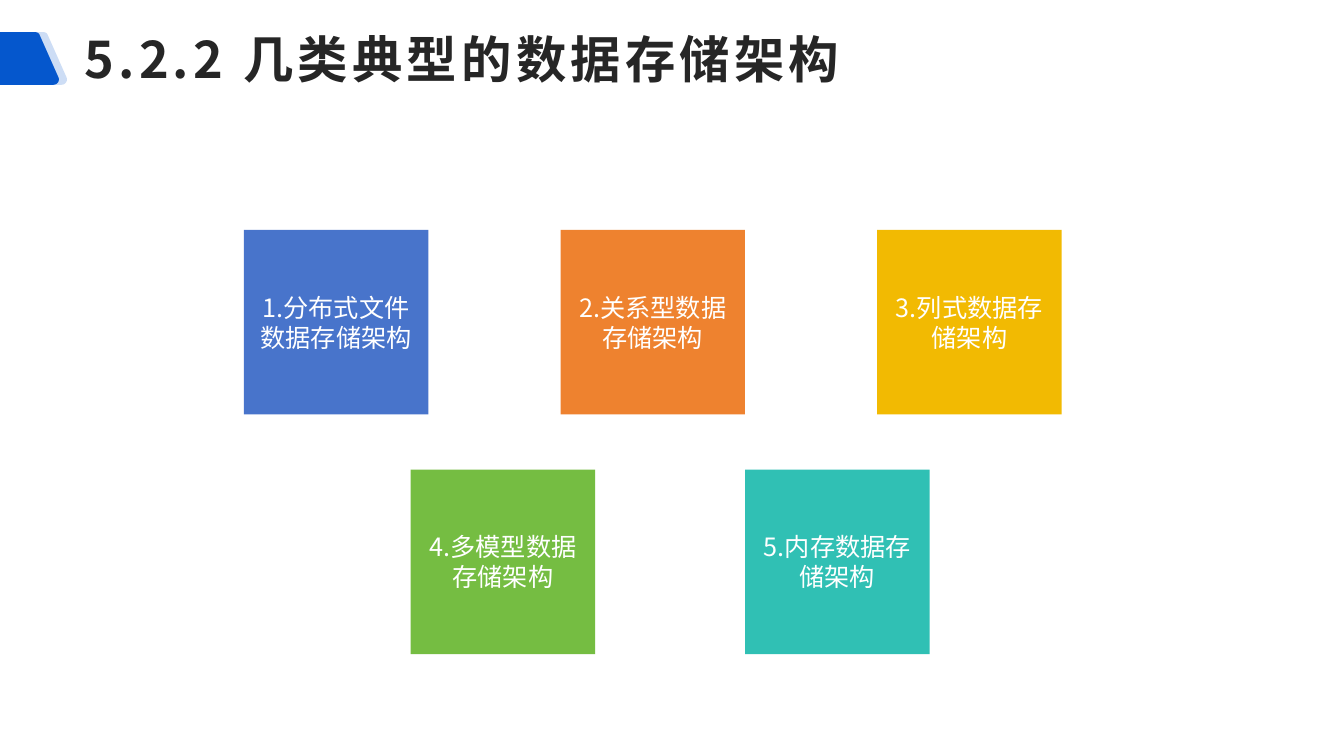
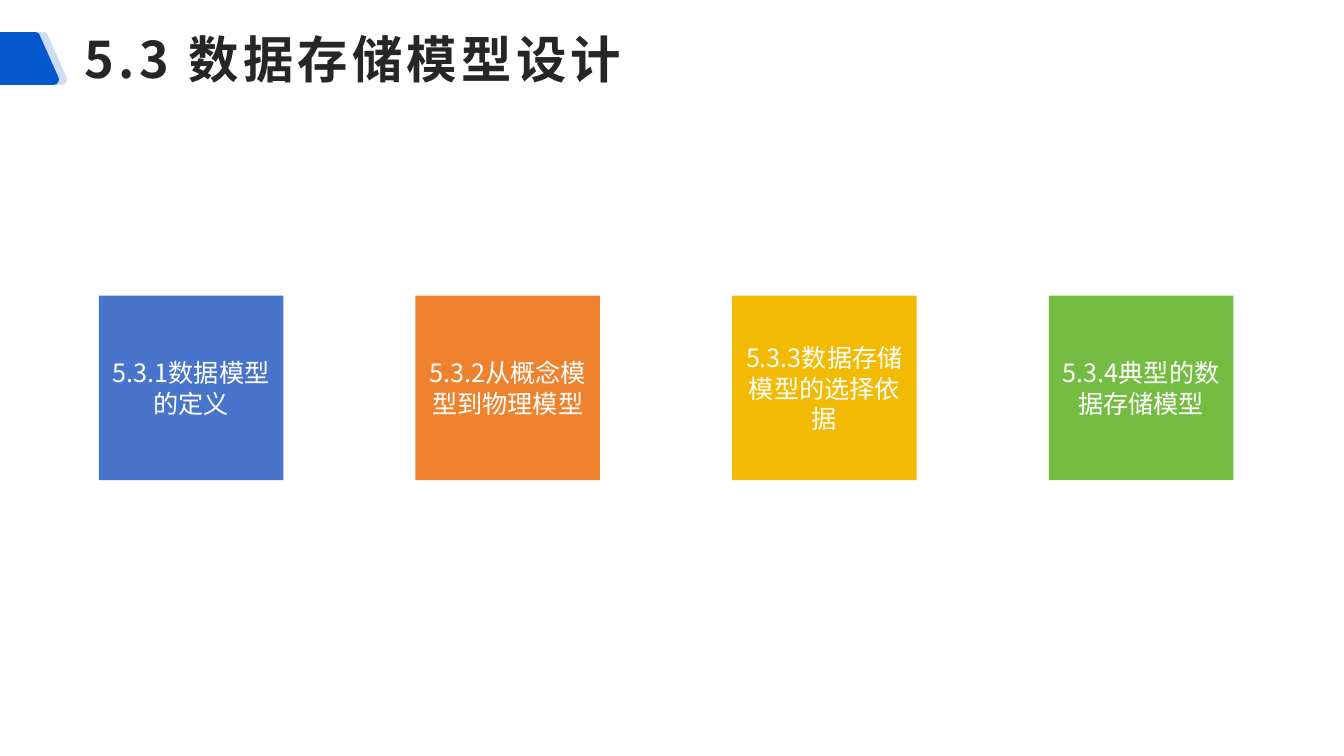
from dataclasses import dataclass

from lxml import etree
from pptx import Presentation
from pptx.dml.color import RGBColor as RGB
from pptx.enum.shapes import MSO_SHAPE as Shape
from pptx.enum.text import MSO_ANCHOR as Anchor, MSO_AUTO_SIZE as AutoSize, PP_ALIGN as Align
from pptx.oxml.ns import qn
from pptx.util import Pt


@dataclass(frozen=True)
class Theme:
    font: str = "Noto Sans CJK SC"
    ink: str = "262626"
    white: str = "FFFFFF"
    badge: str = "0557CD"
    tiles: tuple = ("4874CB", "EE822F", "F2BA02", "75BD42", "30C0B4")
    title_size: int = 36
    title_spacing: int = 3
    tile_size: int = 18


THEME = Theme()
TILE = 131.8
GAP = 94.4


def add_run(p, text, size, color, bold=False, spacing=0):
    r = p.add_run()
    r.text = text
    r.font.size = Pt(size)
    r.font.bold = bold
    r.font.color.rgb = RGB.from_string(color)
    r.font.name = THEME.font
    rpr = r.font._element
    if spacing:
        rpr.set("spc", str(spacing * 100))
    ea = etree.Element(qn("a:ea"), typeface=THEME.font)
    rpr.find(qn("a:latin")).addnext(ea)


def set_fill(sp, color, alpha=100):
    sp.fill.solid()
    sp.fill.fore_color.rgb = RGB.from_string(color)
    sp.line.fill.background()
    sp.shadow.inherit = False
    if alpha < 100:
        clr = sp.element.spPr.find(f"{qn('a:solidFill')}/{qn('a:srgbClr')}")
        etree.SubElement(clr, qn("a:alpha"), val=str(alpha * 1000))


def curve(p0, p1, p2, p3, steps=8):
    for i in range(steps + 1):
        t = i / steps
        u = 1 - t
        yield tuple(
            u**3 * a + 3 * u * u * t * b + 3 * u * t * t * c + t**3 * d
            for a, b, c, d in zip(p0, p1, p2, p3)
        )


def add_badge(slide, layout, offset, alpha):
    top, bottom = 23, 60.6
    edge = [
        *curve((25.2, top), (26.6, top), (28, 23.8), (28.4, 25.2)),
        *curve((41.8, 55.4), (42.8, 57.8), (41, bottom), (38.2, bottom)),
    ]
    outline = [(Pt(x + offset), Pt(y)) for x, y in edge]
    builder = slide.shapes.build_freeform(0, Pt(top))
    builder.add_line_segments(outline + [(0, Pt(bottom))], close=True)
    sp = builder.convert_to_shape()
    set_fill(sp, THEME.badge, alpha)
    layout.shapes.element.append(sp.element)


def place_title(layout):
    title = next(ph for ph in layout.placeholders if ph.placeholder_format.idx == 0)
    title.left, title.top, title.width, title.height = Pt(53.3), Pt(5.8), Pt(906.7), Pt(72)


def set_title(slide, text):
    tf = slide.shapes.title.text_frame
    tf.vertical_anchor = Anchor.MIDDLE
    tf.auto_size = AutoSize.NONE
    p = tf.paragraphs[0]
    p.alignment = Align.LEFT
    add_run(p, text, THEME.title_size, THEME.ink, True, THEME.title_spacing)


def add_tile(slide, text, x, y, color):
    sp = slide.shapes.add_shape(Shape.RECTANGLE, Pt(x), Pt(y), Pt(TILE), Pt(TILE))
    set_fill(sp, color)
    tf = sp.text_frame
    tf.word_wrap = True
    tf.vertical_anchor = Anchor.MIDDLE
    p = tf.paragraphs[0]
    p.alignment = Align.CENTER
    add_run(p, text, THEME.tile_size, THEME.white)


def add_tile_row(slide, labels, left, top, gap=GAP, first=0):
    for i, label in enumerate(labels):
        add_tile(slide, label, left + i * (TILE + gap), top, THEME.tiles[first + i])


def main():
    prs = Presentation()
    prs.slide_width, prs.slide_height = Pt(960), Pt(540)
    layout = prs.slide_layouts[5]
    place_title(layout)

    s = prs.slides.add_slide(layout)
    add_badge(s, layout, offset=5.8, alpha=20)
    add_badge(s, layout, offset=0, alpha=100)
    set_title(s, "5.2.2 几类典型的数据存储架构")
    add_tile_row(s, ["1.分布式文件数据存储架构", "2.关系型数据存储架构", "3.列式数据存储架构"], 174.2, 164.2)
    add_tile_row(s, ["4.多模型数据存储架构", "5.内存数据存储架构"], 293.4, 335.4, gap=107, first=3)

    s = prs.slides.add_slide(layout)
    set_title(s, "5.3 数据存储模型设计")
    add_tile_row(
        s,
        ["5.3.1数据模型的定义", "5.3.2从概念模型到物理模型", "5.3.3数据存储模型的选择依据", "5.3.4典型的数据存储模型"],
        70.6,
        211.2,
    )

    prs.save("out.pptx")


if __name__ == "__main__":
    main()
